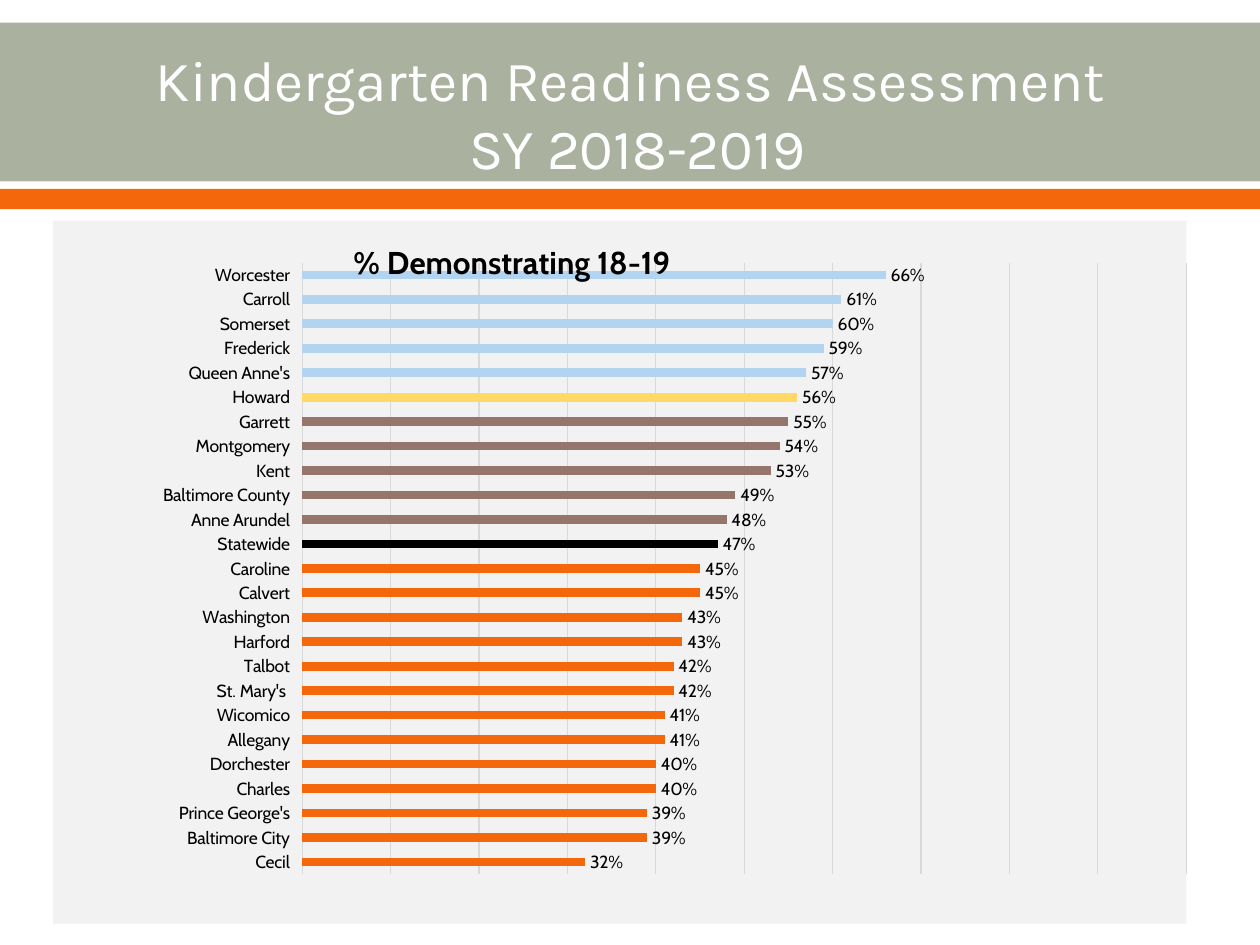
from lxml import etree
from pptx import Presentation
from pptx.chart.data import CategoryChartData as Data
from pptx.dml.color import RGBColor as RGB
from pptx.enum.chart import XL_CHART_TYPE as Kind, XL_LABEL_POSITION as Spot
from pptx.enum.chart import XL_TICK_LABEL_POSITION as Tick, XL_TICK_MARK as Mark
from pptx.enum.shapes import MSO_SHAPE as Shape
from pptx.enum.text import MSO_ANCHOR as Anchor, PP_ALIGN as Align
from pptx.oxml.ns import qn
from pptx.util import Inches, Pt

COLORS = {
    "sage": "ABB19F", "orange": "F4680B", "white": "FFFFFF", "black": "000000",
    "panel": "F2F2F2", "grid": "D9D9D9", "brown": "96756C",
    "yellow": "FFD966", "blue": "B2D4F1",
}

# Percent by county, bottom bar first, grouped by bar colour
GROUPS = [
    ("orange", [("Cecil", 32), ("Baltimore City", 39), ("Prince George's", 39),
                ("Charles", 40), ("Dorchester", 40), ("Allegany", 41),
                ("Wicomico", 41), ("St. Mary's ", 42), ("Talbot", 42),
                ("Harford", 43), ("Washington", 43), ("Calvert", 45),
                ("Caroline", 45)]),
    ("black", [("Statewide", 47)]),
    ("brown", [("Anne Arundel", 48), ("Baltimore County", 49), ("Kent", 53),
               ("Montgomery", 54), ("Garrett", 55)]),
    ("yellow", [("Howard", 56)]),
    ("blue", [("Queen Anne's", 57), ("Frederick", 59), ("Somerset", 60),
              ("Carroll", 61), ("Worcester", 66)]),
]
LABEL = "% Demonstrating 18-19"


def color(name):
    return RGB.from_string(COLORS[name])


def paint(fmt, name):
    fmt.fill.solid()
    fmt.fill.fore_color.rgb = color(name)


def rule(line, name):
    line.color.rgb = color(name)
    line.width = Pt(0.75)


def style(font, size, name, face, bold=False):
    font.size, font.name, font.bold = Pt(size), face, bold
    font.color.rgb = color(name)


def band(slide, box, name):
    bar = slide.shapes.add_shape(Shape.RECTANGLE, *box)
    bar.shadow.inherit = False
    paint(bar, name)
    bar.line.fill.background()


def header(slide, box):
    left, top, width, height = box
    band(slide, (left, top, width, Inches(1.26)), "sage")
    stripe = Inches(0.16)
    band(slide, (left, top + height - stripe, width, stripe), "orange")

    # Title moves in front of the bands
    title = slide.shapes.title
    title.left, title.top = left + Inches(0.5), top + Inches(0.15)
    title.width, title.height = Inches(9.12), Inches(1.13)
    slide.shapes._spTree.append(title._element)
    frame = title.text_frame
    frame.text = "Kindergarten Readiness Assessment \vSY 2018-2019"
    frame.vertical_anchor = Anchor.MIDDLE
    para = frame.paragraphs[0]
    para.alignment = Align.CENTER
    style(para.font, 32.4, "white", "Karla")


def layout(node, index, **parts):
    """Give a chart part a manual position; index is the layout's place."""
    for old in node.findall(qn("c:layout")):
        node.remove(old)
    place = etree.Element(qn("c:layout"))
    node.insert(index, place)
    manual = etree.SubElement(place, qn("c:manualLayout"))
    for tag, val in parts.items():
        etree.SubElement(manual, qn("c:" + tag)).set("val", str(val))


def bars(slide, box):
    rows = [(name, val, tint) for tint, group in GROUPS for name, val in group]
    data = Data(number_format="0%")
    data.categories = [name for name, _, _ in rows]
    data.add_series(LABEL, [val / 100 for _, val, _ in rows])
    chart = slide.shapes.add_chart(Kind.BAR_CLUSTERED, *box, data).chart
    style(chart.font, 10, "black", "Cabin")
    chart.has_legend = False

    # Chart title
    chart.has_title = True
    text = chart.chart_title.text_frame
    text.text = LABEL
    style(text.paragraphs[0].font, 18, "black", "Cabin", True)

    # Title and plot positions
    space = chart._chartSpace
    head = space.find(".//" + qn("c:title"))
    layout(head, 1, xMode="edge", yMode="edge", x=0.26, y=0.02)
    area = space.find(".//" + qn("c:plotArea"))
    layout(area, 0, layoutTarget="inner", xMode="edge", yMode="edge",
           x=0.22, y=0.06, w=0.78, h=0.87)

    # Panel fill
    props = etree.Element(qn("c:spPr"))
    fill = etree.SubElement(props, qn("a:solidFill"))
    etree.SubElement(fill, qn("a:srgbClr")).set("val", COLORS["panel"])
    edge = etree.SubElement(props, qn("a:ln"))
    etree.SubElement(edge, qn("a:noFill"))
    space.find(qn("c:chart")).addnext(props)

    # Axes
    cats, vals = chart.category_axis, chart.value_axis
    cats.major_tick_mark = Mark.NONE
    cats.tick_label_position = Tick.LOW
    rule(cats.format.line, "grid")
    vals.minimum_scale, vals.maximum_scale, vals.major_unit = 0, 1, 0.1
    vals.has_major_gridlines = True
    rule(vals.major_gridlines.format.line, "grid")
    vals.visible = False

    # Bars and value labels
    plot = chart.plots[0]
    plot.gap_width = 182
    plot.vary_by_categories = False
    series = plot.series[0]
    paint(series.format, "orange")
    for i, (_, _, tint) in enumerate(rows):
        if tint != "orange":
            paint(series.points[i].format, tint)
    plot.has_data_labels = True
    tags = plot.data_labels
    tags.show_value = True
    tags.number_format, tags.number_format_is_linked = "0%", False
    tags.position = Spot.OUTSIDE_END
    style(tags.font, 10, "black", "Cabin")


def main():
    deck = Presentation()
    deck.slide_width, deck.slide_height = Inches(10), Inches(7.5)
    slide = deck.slides.add_slide(deck.slide_layouts[5])
    header(slide, (0, Inches(0.18), deck.slide_width, Inches(1.48)))
    bars(slide, (Inches(0.42), Inches(1.75), Inches(9), Inches(5.58)))
    deck.save("out.pptx")


if __name__ == "__main__":
    main()
